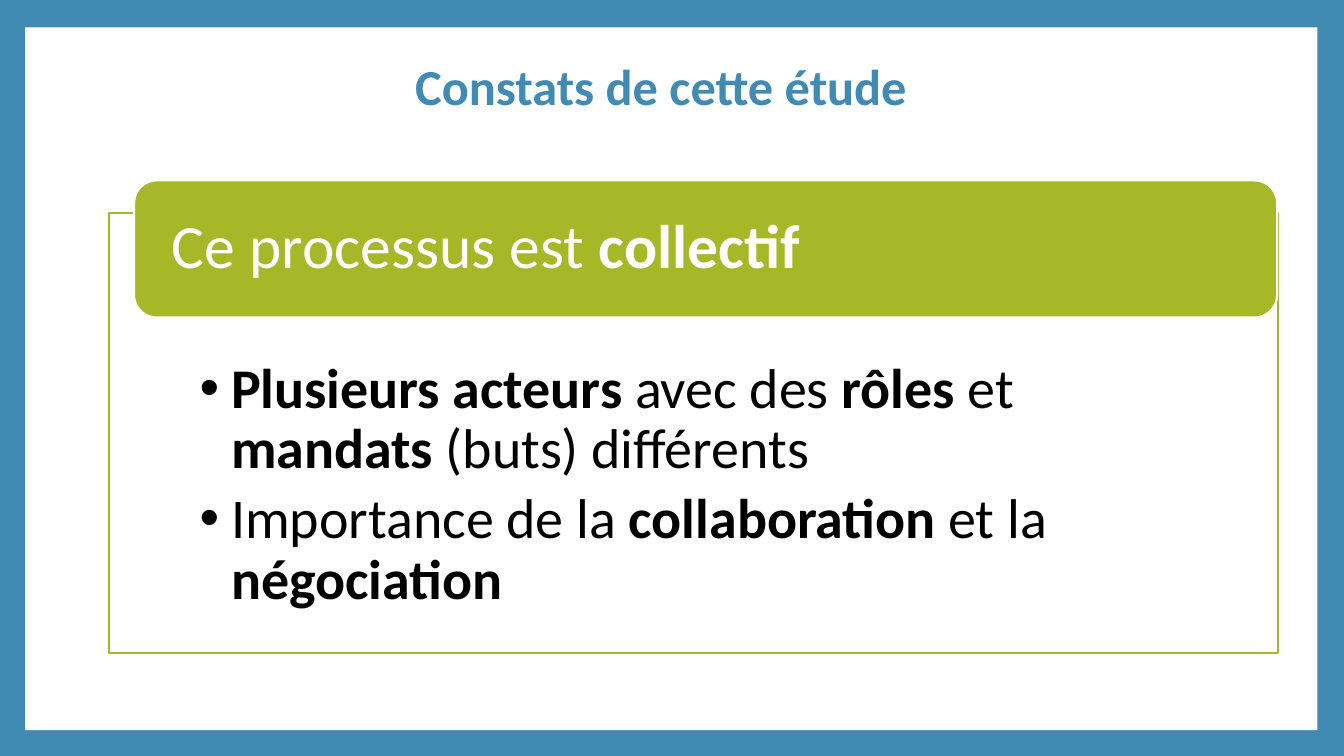
from dataclasses import dataclass

from lxml import etree
from pptx import Presentation
from pptx.dml.color import RGBColor
from pptx.enum.shapes import MSO_SHAPE
from pptx.enum.text import MSO_ANCHOR, PP_ALIGN
from pptx.oxml.ns import qn
from pptx.shapes.autoshape import Shape
from pptx.slide import Slide
from pptx.util import Pt

RECT = MSO_SHAPE.RECTANGLE
ROUND = MSO_SHAPE.ROUNDED_RECTANGLE
TOP, MIDDLE = MSO_ANCHOR.TOP, MSO_ANCHOR.MIDDLE
LEFT, CENTER = PP_ALIGN.LEFT, PP_ALIGN.CENTER


@dataclass(frozen=True)
class Theme:
    blue: str = "418AB3"
    green: str = "A6B727"
    white: str = "FFFFFF"
    black: str = "000000"
    font: str = "Calibri"
    title: float = 36
    head: float = 44
    body: float = 40
    edge: float = 1.5
    pitch: float = 0.9
    gap: float = 7
    hang: float = 22.5


THEME = Theme()


@dataclass(frozen=True)
class Part:
    text: str
    bold: bool = False


@dataclass(frozen=True)
class Box:
    place: tuple[float, float, float, float]
    fill: str | None = None
    line: str | None = None
    form: MSO_SHAPE = RECT
    alpha: int = 100
    paras: tuple[tuple[Part, ...], ...] = ()
    size: float = THEME.body
    color: str = THEME.black
    inset: tuple[float, float, float, float] = (7.2, 3.6, 7.2, 3.6)
    anchor: MSO_ANCHOR = MIDDLE
    align: PP_ALIGN = LEFT
    bullet: bool = False


BOXES = (
    Box((18, 19.5, 923, 502), THEME.white),
    Box(
        (175.7, 26.6, 601.2, 74.9),
        paras=((Part("Constats de cette étude ", True),),),
        size=THEME.title,
        color=THEME.blue,
        align=CENTER,
    ),
    Box(
        (77.8, 151.9, 835.2, 314.6),
        THEME.white,
        THEME.green,
        alpha=90,
        paras=(
            (
                Part("Plusieurs acteurs ", True),
                Part("avec des "),
                Part("rôles", True),
                Part(" et "),
                Part("mandats", True),
                Part(" (buts) différents"),
            ),
            (
                Part("Importance de la "),
                Part("collaboration", True),
                Part(" et la "),
                Part("négociation", True),
            ),
        ),
        inset=(64.8, 105.1, 64.8, 22.3),
        anchor=TOP,
        bullet=True,
    ),
    Box(
        (95.8, 128.9, 816.5, 97.9),
        THEME.green,
        THEME.white,
        ROUND,
        paras=((Part("Ce processus est "), Part("collectif", True)),),
        size=THEME.head,
        color=THEME.white,
        inset=(22.3, 0, 22.3, 0),
    ),
)


def paint(shape: Shape, box: Box) -> None:
    if box.fill:
        shape.fill.solid()
        shape.fill.fore_color.rgb = RGBColor.from_string(box.fill)
        if box.alpha < 100:
            tint = shape.fill._xPr.find(qn("a:solidFill"))[0]
            etree.SubElement(tint, qn("a:alpha"), val=str(box.alpha * 1000))
    else:
        shape.fill.background()
    if box.line:
        shape.line.color.rgb = RGBColor.from_string(box.line)
        shape.line.width = Pt(THEME.edge)
    else:
        shape.line.fill.background()


def write(shape: Shape, box: Box) -> None:
    frame = shape.text_frame
    frame.word_wrap = True
    frame.vertical_anchor = box.anchor
    sides = (Pt(side) for side in box.inset)
    frame.margin_left, frame.margin_top, frame.margin_right, frame.margin_bottom = sides
    for rank, parts in enumerate(box.paras):
        para = frame.add_paragraph() if rank else frame.paragraphs[0]
        para.alignment = box.align
        para.line_spacing = THEME.pitch
        if box.bullet:
            para.space_after = Pt(THEME.gap)
            props = para._p.get_or_add_pPr()
            props.set("marL", str(Pt(THEME.hang)))
            props.set("indent", str(-Pt(THEME.hang)))
            etree.SubElement(props, qn("a:buFont"), typeface="Arial")
            etree.SubElement(props, qn("a:buChar"), char="•")
        for part in parts:
            run = para.add_run()
            run.text = part.text
            run.font.name = THEME.font
            run.font.size = Pt(box.size)
            run.font.bold = part.bold
            run.font.color.rgb = RGBColor.from_string(box.color)


def draw(slide: Slide, box: Box) -> None:
    place = (Pt(value) for value in box.place)
    shape = slide.shapes.add_shape(box.form, *place)
    shape.shadow.inherit = False
    paint(shape, box)
    write(shape, box)


def main() -> None:
    deck = Presentation()
    deck.slide_width, deck.slide_height = Pt(960), Pt(540)
    slide = deck.slides.add_slide(deck.slide_layouts[6])
    slide.background.fill.solid()
    slide.background.fill.fore_color.rgb = RGBColor.from_string(THEME.blue)
    for box in BOXES:
        draw(slide, box)
    deck.save("out.pptx")


if __name__ == "__main__":
    main()
